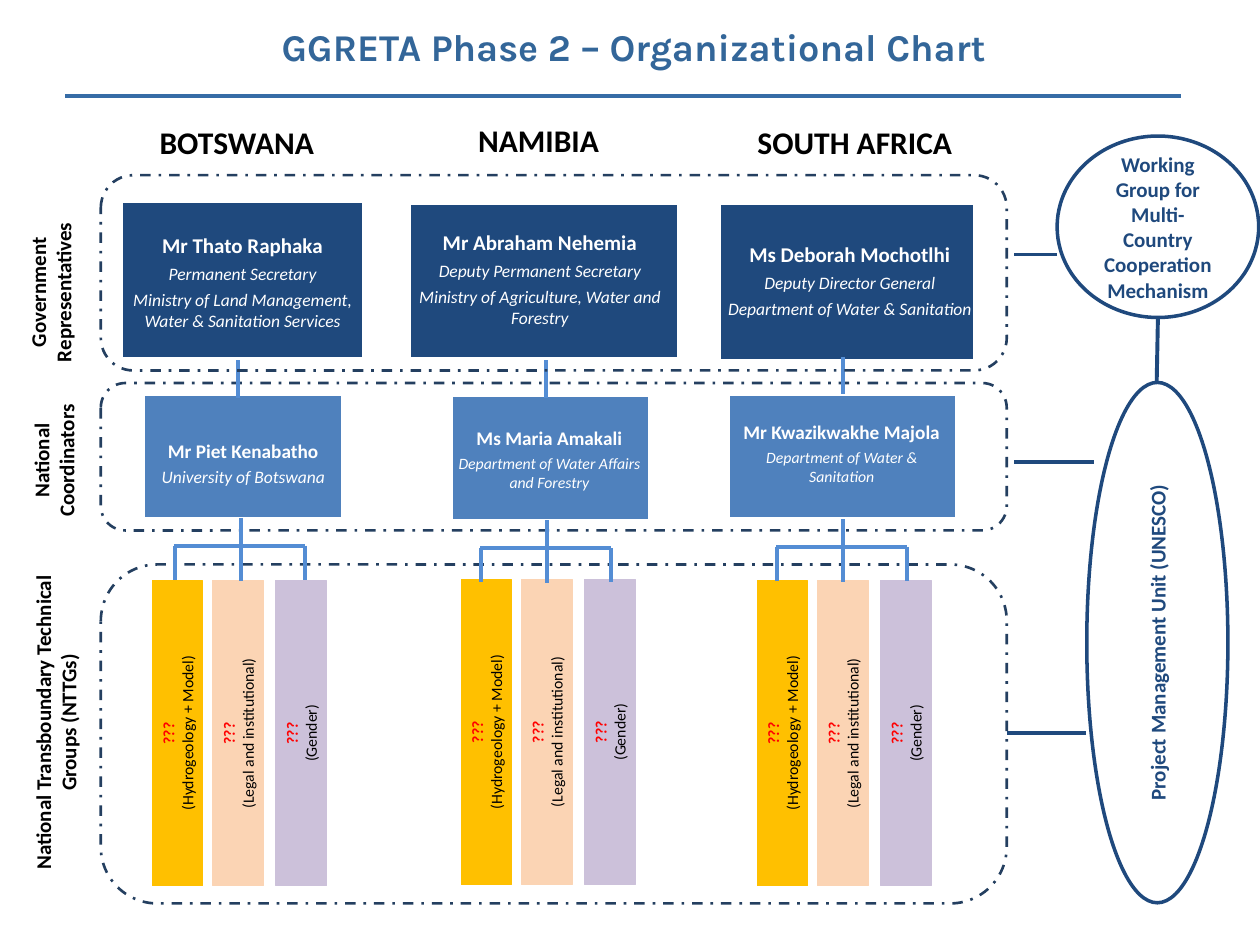
from collections import namedtuple

from lxml.etree import SubElement
from pptx import Presentation
from pptx.dml.color import RGBColor
from pptx.enum.dml import MSO_LINE_DASH_STYLE as DASH
from pptx.enum.shapes import MSO_CONNECTOR as CONN, MSO_SHAPE as SHAPE
from pptx.enum.text import MSO_ANCHOR as ANCHOR, MSO_AUTO_SIZE as FIT, PP_ALIGN as ALIGN
from pptx.oxml.ns import qn
from pptx.util import Pt

PX = 9144  # 100 px to the inch

WHITE = RGBColor(0xFF, 0xFF, 0xFF)
BLACK = RGBColor(0, 0, 0)
RED = RGBColor(0xFF, 0, 0)
TITLE_BLUE = RGBColor(0x33, 0x66, 0x99)
RULE_BLUE = RGBColor(0x36, 0x6C, 0xA6)
NAVY = RGBColor(0x1F, 0x49, 0x7D)
BLUE = RGBColor(0x4F, 0x81, 0xBD)
TREE_BLUE = RGBColor(0x54, 0x8D, 0xD4)
FRAME_BLUE = RGBColor(0x24, 0x3F, 0x60)
GOLD = RGBColor(0xFF, 0xC0, 0x00)
PEACH = RGBColor(0xFB, 0xD4, 0xB4)
LILAC = RGBColor(0xCC, 0xC1, 0xDA)

Line = namedtuple("Line", "text size color bold italic", defaults=(BLACK, False, False))
Country = namedtuple("Country", "heading heading_box rep rep_box rep_text "
                     "coord coord_box coord_text link tree bars")


class ChartSlide:
    font = "Calibri"

    def __init__(self, prs):
        self.s = prs.slides.add_slide(prs.slide_layouts[5])

    def set_text(self, tf, lines, after=0, anchor=ANCHOR.TOP, inset=None, font=None):
        tf.word_wrap = True
        tf.auto_size = FIT.NONE
        tf.vertical_anchor = anchor
        if inset is not None:
            tf.margin_left = tf.margin_top = tf.margin_right = tf.margin_bottom = inset
        for i, line in enumerate(lines):
            p = tf.add_paragraph() if i else tf.paragraphs[0]
            p.text = line.text
            p.alignment = ALIGN.CENTER
            p.space_before, p.space_after = Pt(0), Pt(after)
            p.font.name = font or self.font
            p.font.size = Pt(line.size)
            p.font.bold, p.font.italic = line.bold, line.italic
            p.font.color.rgb = line.color

    def title(self, box, line, font):
        sp = self.s.shapes.title
        sp.left, sp.top, sp.width, sp.height = (v * PX for v in box)
        self.set_text(sp.text_frame, [line], anchor=ANCHOR.MIDDLE, font=font)

    def text(self, box, lines, rotation=0, **style):
        sp = self.s.shapes.add_textbox(*(v * PX for v in box))
        sp.rotation = rotation
        self.set_text(sp.text_frame, lines, **style)

    def shape(self, kind, box, line, width, fill=None, dash=None, lines=(),
              rotation=0, **style):
        sp = self.s.shapes.add_shape(kind, *(v * PX for v in box))
        sp.shadow.inherit = False
        sp.rotation = rotation
        if fill is None:
            sp.fill.background()
        else:
            sp.fill.solid()
            sp.fill.fore_color.rgb = fill
        sp.line.color.rgb = line
        sp.line.width = Pt(width)
        if dash is not None:
            sp.line.dash_style = dash
        if lines:
            self.set_text(sp.text_frame, lines, **style)

    def frame(self, top, height):
        self.shape(SHAPE.ROUNDED_RECTANGLE, (80, top, 719, height), FRAME_BLUE, 1.5,
                   dash=DASH.DASH_DOT)

    def line(self, x1, y1, x2, y2, color=TREE_BLUE, width=2.25):
        c = self.s.shapes.add_connector(CONN.STRAIGHT, x1 * PX, y1 * PX, x2 * PX, y2 * PX)
        c.line.color.rgb = color
        c.line.width = Pt(width)
        SubElement(c._element.spPr, qn("a:effectLst"))

    def block(self, box, text_box, lines, fill, after):
        self.shape(SHAPE.RECTANGLE, box, WHITE, 2, fill=fill)
        self.text(text_box, lines, after=after, anchor=ANCHOR.MIDDLE, inset=0)

    def tree(self, x, y):
        self.line(x, y, x, y + 50)
        self.line(x - 53, y + 22, x + 51, y + 22)
        for branch in (x - 52, x + 51):
            self.line(branch, y + 22, branch, y + 49)

    def bar(self, x, y, fill, label):
        self.shape(SHAPE.RECTANGLE, (x - 121, y - 20, 242, 40), fill, 0.5, fill=fill,
                   rotation=270, lines=[Line("???", 9, RED, True), Line(label, 9)])


ROW_LABELS = [
    ("Government Representatives", (-27, 195, 158, 74)),
    ("National Coordinators", (-10, 334, 118, 63)),
    ("National Transboundary Technical Groups (NTTGs)", (-88, 546, 269, 55)),
]
GROUPS = [(-48, GOLD, "(Hydrogeology + Model)"), (0, PEACH, "(Legal and institutional)"),
          (50, LILAC, "(Gender)")]
COUNTRIES = [
    Country("BOTSWANA", (100, 93, 176, 63),
            ("Mr Thato Raphaka", "Permanent Secretary",
             "Ministry of Land Management, Water & Sanitation Services"),
            (96, 160, 193, 125), (96, 161, 193, 125),
            ("Mr Piet Kenabatho", "University of Botswana", 10),
            (114, 313, 158, 99), (114, 313, 158, 109),
            (189, 286), (191, 411), (189, 582)),
    Country("NAMIBIA", (351, 91, 153, 63),
            ("Mr Abraham Nehemia", "Deputy Permanent Secretary",
             "Ministry of Agriculture, Water and Forestry"),
            (325, 161, 214, 124), (332, 159, 193, 125),
            ("Ms Maria Amakali", "Department of Water Affairs and Forestry", 9),
            (358, 314, 158, 99), (357, 310, 158, 109),
            (433, 286), (434, 413), (434, 581)),
    Country("SOUTH AFRICA", (585, 93, 187, 63),
            ("Ms Deborah Mochotlhi", "Deputy Director General",
             "Department of Water & Sanitation"),
            (571, 161, 203, 125), (578, 160, 193, 125),
            ("Mr Kwazikwakhe Majola", "Department of Water & Sanitation", 9),
            (578, 313, 181, 99), (589, 315, 158, 89),
            (669, 283), (669, 412), (669, 582)),
]


def main():
    prs = Presentation()
    prs.slide_width, prs.slide_height = 1000 * PX, 750 * PX
    chart = ChartSlide(prs)

    # Title and rule
    chart.title((53, 14, 900, 46),
                Line("GGRETA Phase 2 – Organizational Chart", 21.6, TITLE_BLUE, True), "Karla")
    chart.line(52, 76, 937, 76, RULE_BLUE, 2)

    # Row labels and the two lower frames
    for label, box in ROW_LABELS:
        chart.text(box, [Line(label, 12, bold=True)], rotation=270)
    chart.frame(304, 117)
    chart.frame(448, 269)

    # One column per country
    for c in COUNTRIES:
        chart.text(c.heading_box, [Line(c.heading, 18, bold=True)])
        name, *roles = c.rep
        chart.block(c.rep_box, c.rep_text,
                    [Line(name, 12, WHITE, True)]
                    + [Line(role, 10, WHITE, italic=True) for role in roles],
                    NAVY, 2.9)
        name, office, size = c.coord
        chart.block(c.coord_box, c.coord_text,
                    [Line(name, 11, WHITE, True), Line(office, size, WHITE, italic=True)],
                    BLUE, 2.5)
        x, y = c.link
        chart.line(x, y, x, y + 30)
        x, y = c.bars
        for offset, fill, label in GROUPS:
            chart.bar(x + offset, y, fill, label)
        chart.tree(*c.tree)
    chart.frame(139, 155)

    # Steering bodies on the right
    for label, box, rotation in [
        ("Project Management Unit (UNESCO)", (712, 454, 413, 112), 270),
        ("Working Group for Multi-Country Cooperation Mechanism", (839, 108, 160, 144), 0),
    ]:
        chart.shape(SHAPE.OVAL, box, NAVY, 2, rotation=rotation,
                    lines=[Line(label, 12, NAVY, True)], anchor=ANCHOR.MIDDLE)
    for ends in [(862, 582, 799, 582), (918, 304, 919, 253),
                 (868, 367, 805, 367), (839, 202, 805, 202)]:
        chart.line(*ends, color=NAVY)

    prs.save("out.pptx")


if __name__ == "__main__":
    main()
